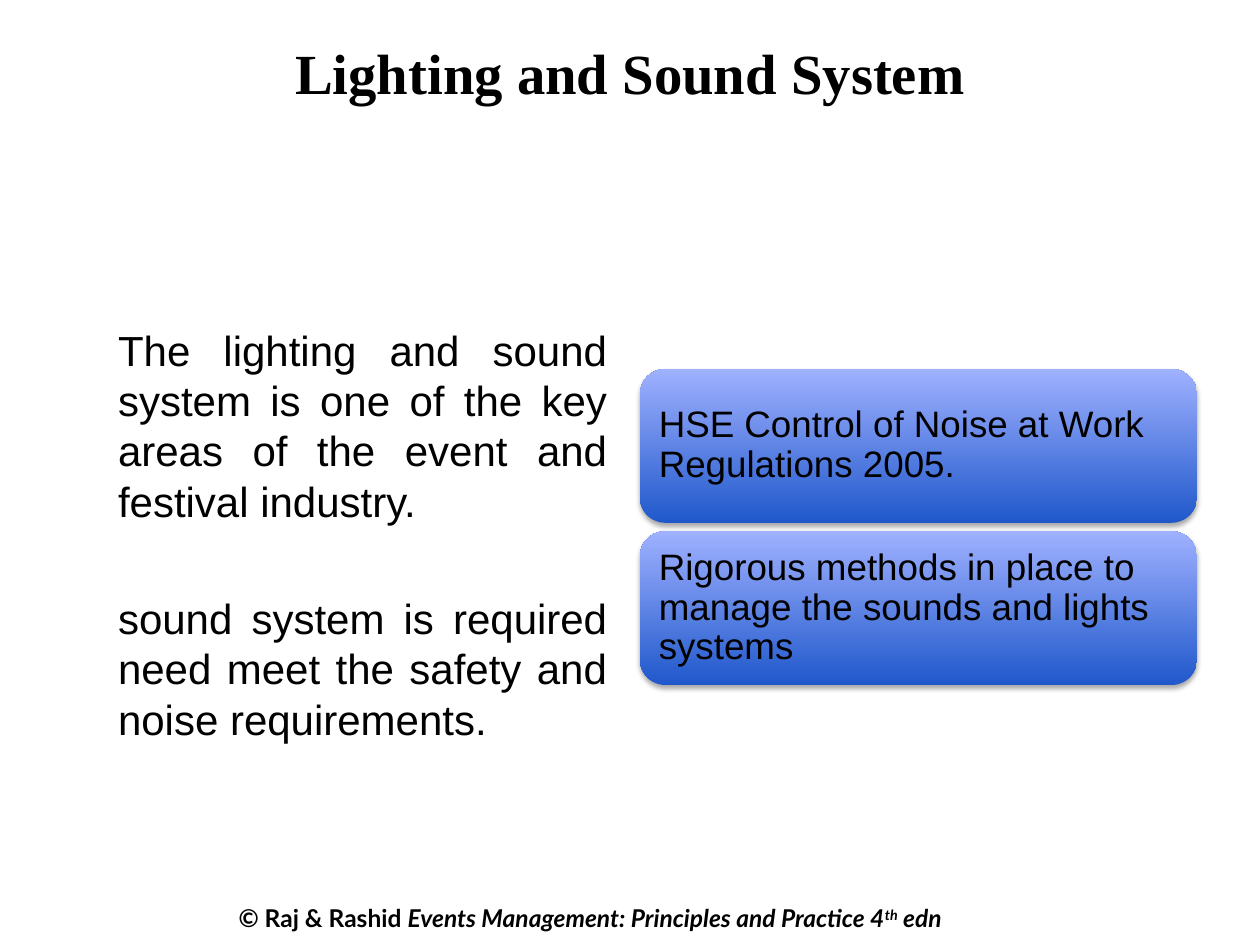
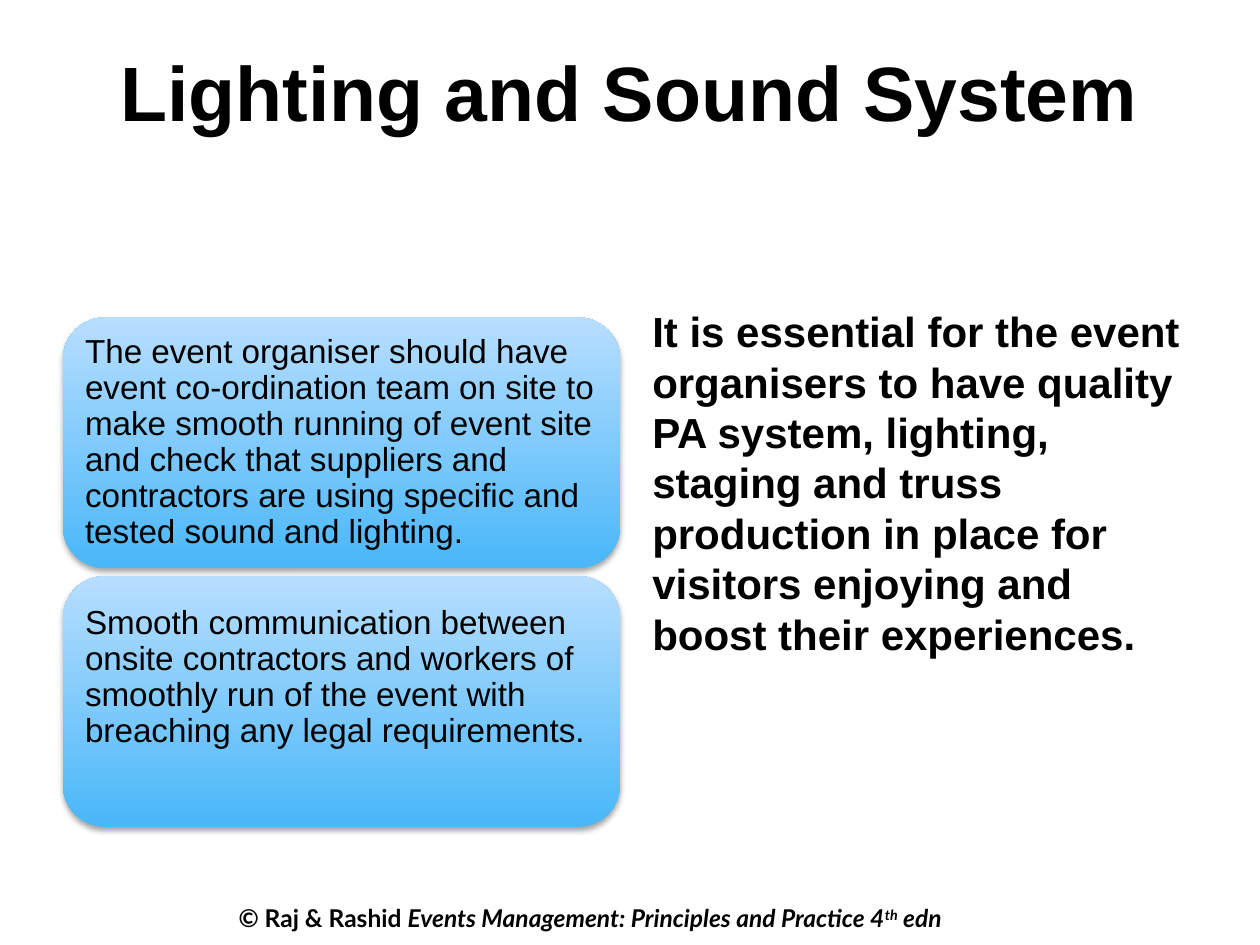
from collections import namedtuple

from lxml import etree
from pptx import Presentation
from pptx import util as u
from pptx.dml import color
from pptx.enum import shapes, text
from pptx.oxml import ns

Box = namedtuple("Box", "left top width height")

BLACK = "000000"
ROYAL = ("2058CB", "9FB1FF")
SKY = ("49B7F8", "B7DEFF")
TITLE_BOX = Box(1.27, 0.76, 22.86, 3.18)
FOOTER_BOX = Box(4.56, 18.08, 17.7, 0.86)
TITLE = "Lighting and Sound System"


def rgb(value):
    """Turn a hex string into a colour."""
    return color.RGBColor.from_string(value)


def lengths(box):
    """Give the four sides of a box as lengths."""
    return [u.Cm(side) for side in box]


def add_run(paragraph, words, size, font="Arial", bold=False, italic=False):
    """Add one formatted run to a paragraph."""
    run = paragraph.add_run()
    run.text = words
    run.font.name = font
    run.font.size = u.Pt(size)
    run.font.bold = bold
    run.font.italic = italic
    run.font.color.rgb = rgb(BLACK)
    return run


def add_title(slide, size, font, inset):
    """Move and format the title placeholder."""
    title = slide.shapes.title
    title.left, title.top, title.width, title.height = lengths(TITLE_BOX)
    frame = title.text_frame
    frame.auto_size = text.MSO_AUTO_SIZE.NONE
    frame.vertical_anchor = text.MSO_ANCHOR.TOP
    frame.margin_top = u.Cm(inset)
    frame.paragraphs[0].alignment = text.PP_ALIGN.CENTER
    add_run(frame.paragraphs[0], TITLE, size, font, bold=True)


def add_footer(slide):
    """Add the book credit at the foot of the slide."""
    frame = slide.shapes.add_textbox(*lengths(FOOTER_BOX)).text_frame
    frame.word_wrap = False
    credit = frame.paragraphs[0]
    add_run(credit, "© Raj & Rashid ", 14, "Lato", bold=True)
    for words, raised in (("Events Management: Principles and Practice 4", False),
                          ("th", True), (" edn", False)):
        run = add_run(credit, words, 14, "Lato", bold=True, italic=True)
        if raised:
            run.font._element.set("baseline", "30000")


def add_body(slide, box, statements, align=text.PP_ALIGN.LEFT, bold=False):
    """Write the statements as spaced paragraphs in the box."""
    frame = slide.shapes.add_textbox(*lengths(box)).text_frame
    frame.word_wrap = True
    for index, statement in enumerate(statements):
        paragraph = frame.add_paragraph() if index else frame.paragraphs[0]
        paragraph.alignment = align
        if index:
            paragraph.space_before = u.Pt(38)
        add_run(paragraph, statement, 24, bold=bold)


def add_shadow(card):
    """Give a card a soft shadow below it."""
    card.shadow.inherit = False
    effects = card._element.spPr.find(ns.qn("a:effectLst"))
    shadow = etree.SubElement(effects, ns.qn("a:outerShdw"), blurRad=str(u.Pt(3.1)),
                              dist=str(u.Pt(1.8)), dir="5400000", rotWithShape="0")
    shade = etree.SubElement(shadow, ns.qn("a:srgbClr"), val=BLACK)
    etree.SubElement(shade, ns.qn("a:alpha"), val="35000")


def add_card(slide, box, words, size, gradient, inset, lift):
    """Add a rounded gradient card, its text raised by half of lift."""
    card = slide.shapes.add_shape(shapes.MSO_SHAPE.ROUNDED_RECTANGLE, *lengths(box))
    card.fill.gradient()
    card.fill.gradient_angle = 90
    for stop, shade in zip(card.fill.gradient_stops, gradient):
        stop.color.rgb = rgb(shade)
    card.line.fill.background()
    add_shadow(card)
    frame = card.text_frame
    frame.word_wrap = True
    frame.vertical_anchor = text.MSO_ANCHOR.MIDDLE
    frame.margin_left = frame.margin_right = frame.margin_top = u.Cm(inset)
    frame.margin_bottom = u.Cm(inset + lift)
    paragraph = frame.paragraphs[0]
    paragraph.alignment = text.PP_ALIGN.LEFT
    paragraph.line_spacing = 0.9
    add_run(paragraph, words, size)


def add_cards(slide, box, statements, size, gradient, inset, gap, last_lift=0):
    """Stack equal cards in the box, one for each statement."""
    count = len(statements)
    height = (box.height - gap * (count - 1)) / count
    for index, statement in enumerate(statements):
        place = Box(box.left, box.top + index * (height + gap), box.width, height)
        lift = last_lift if index == count - 1 else 0
        add_card(slide, place, statement, size, gradient, inset, lift)


def build_regulations(slide):
    """Build the slide on noise regulations."""
    add_title(slide, 32.4, "Times New Roman", inset=0)
    add_body(slide, Box(2.13, 6.41, 10.36, 9.65), [
        "The lighting and sound system is one of the key areas of the event and "
        "festival industry.",
        "sound system is required need meet the safety and noise requirements.",
    ], align=text.PP_ALIGN.JUSTIFY)
    add_cards(slide, Box(12.9, 7.44, 11.23, 6.37), [
        "HSE Control of Noise at Work Regulations 2005.",
        "Rigorous methods in place to manage the sounds and lights systems",
    ], 21, ROYAL, inset=0.23, gap=0.17)


def build_coordination(slide):
    """Build the slide on coordination at the event site."""
    add_title(slide, 44, "Arial", inset=0.14)
    add_body(slide, Box(12.9, 6.04, 11.23, 10.97), [
        "It is essential for the event organisers to have quality PA system, lighting, "
        "staging and truss production in place for visitors enjoying and boost their "
        "experiences.",
    ], bold=True)
    add_cards(slide, Box(1.27, 6.4, 11.23, 10.27), [
        "The event organiser should have event co-ordination team on site to make "
        "smooth running of event site and check that suppliers and contractors are "
        "using specific and tested sound and lighting.",
        "Smooth communication between onsite contractors and workers of smoothly run "
        "of the event with breaching any legal requirements.",
    ], 19, SKY, inset=0.2, gap=0.16, last_lift=0.97)


def main():
    """Build and save the presentation."""
    deck = Presentation()
    deck.slide_width, deck.slide_height = u.Cm(25.4), u.Cm(19.05)
    for build in (build_regulations, build_coordination):
        slide = deck.slides.add_slide(deck.slide_layouts[5])
        build(slide)
        add_footer(slide)
    deck.save("out.pptx")


if __name__ == "__main__":
    main()
